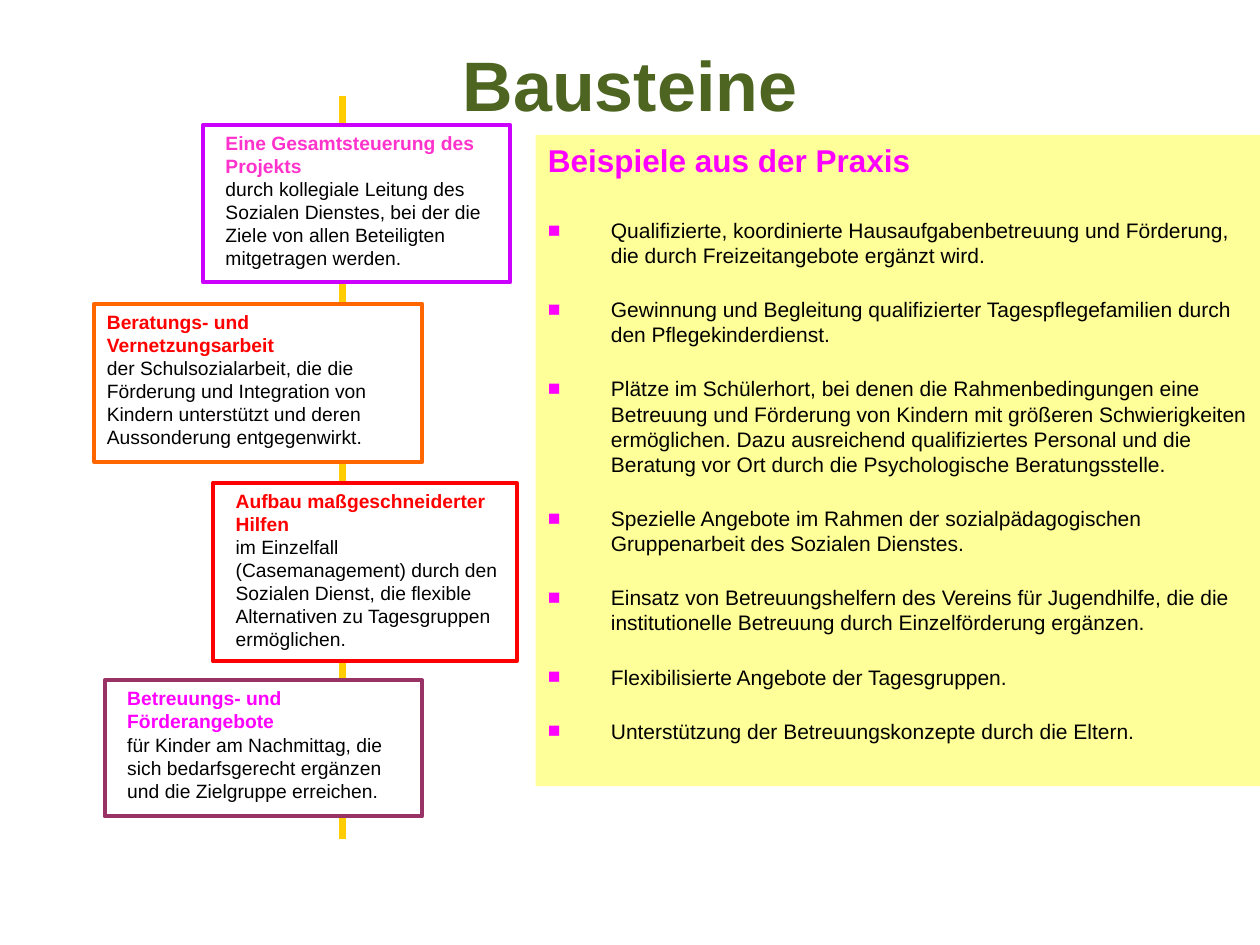
from lxml import etree
from pptx import Presentation, util as u
from pptx.dml.color import RGBColor
from pptx.enum import shapes, text
from pptx.oxml.ns import qn

COLUMNS, ROWS = 100, 75
CELL = u.Inches(0.1)

COLORS = {
    "title": "4D6521", "axis": "FFCC00", "paper": "FFFFFF", "panel": "FFFF99",
    "ink": "000000", "violet": "CC00FF", "orange": "FF6600", "red": "FF0000",
    "plum": "993366", "pink": "FF33CC", "magenta": "FF00FF",
}

# left, top, width, height (grid cells), left inset, line, heading colour, heading, body
BLOCKS = [
    (16.1, 9.9, 24.4, 12.5, 1.8, "violet", "pink", "Eine Gesamtsteuerung des Projekts",
     "durch kollegiale Leitung des Sozialen Dienstes, bei der die Ziele von allen "
     "Beteiligten mitgetragen werden."),
    (7.5, 24.1, 26, 12.6, 1, "orange", "red", "Beratungs- und Vernetzungsarbeit",
     "der Schulsozialarbeit, die die Förderung und Integration von Kindern unterstützt "
     "und deren Aussonderung entgegenwirkt."),
    (16.9, 38.3, 24.1, 14.2, 1.8, "red", "red", "Aufbau maßgeschneiderter Hilfen",
     "im Einzelfall (Casemanagement) durch den Sozialen Dienst, die flexible "
     "Alternativen zu Tagesgruppen ermöglichen."),
    (8.3, 54, 25.2, 10.8, 1.8, "plum", "magenta", "Betreuungs- und Förderangebote",
     "für Kinder am Nachmittag, die sich bedarfsgerecht ergänzen und die Zielgruppe "
     "erreichen."),
]

EXAMPLES = [
    "Qualifizierte, koordinierte Hausaufgabenbetreuung und Förderung, die durch "
    "Freizeitangebote ergänzt wird.",
    "Gewinnung und Begleitung qualifizierter Tagespflegefamilien durch den "
    "Pflegekinderdienst.",
    "Plätze im Schülerhort, bei denen die Rahmenbedingungen eine Betreuung und "
    "Förderung von Kindern mit größeren Schwierigkeiten ermöglichen. Dazu ausreichend "
    "qualifiziertes Personal und die Beratung vor Ort durch die Psychologische "
    "Beratungsstelle.",
    "Spezielle Angebote im Rahmen der sozialpädagogischen Gruppenarbeit des Sozialen "
    "Dienstes.",
    "Einsatz von Betreuungshelfern des Vereins für Jugendhilfe, die die institutionelle "
    "Betreuung durch Einzelförderung ergänzen.",
    "Flexibilisierte Angebote der Tagesgruppen.",
    "Unterstützung der Betreuungskonzepte durch die Eltern.",
]


def cells(*counts):
    return [round(count * CELL) for count in counts]


def color(name):
    return RGBColor.from_string(COLORS[name])


def add_axis(page, column, top, bottom):
    axis = page.shapes.add_connector(
        shapes.MSO_CONNECTOR.STRAIGHT, *cells(column, bottom, column, top))
    axis.line.color.rgb = color("axis")
    axis.line.width = u.Pt(4)
    etree.SubElement(axis._element.spPr, qn("a:effectLst"))


def set_frame(box, left=1, top=0.5, anchor=text.MSO_ANCHOR.TOP):
    frame = box.text_frame
    frame.word_wrap = True
    frame.vertical_anchor = anchor
    frame.margin_left, frame.margin_top, frame.margin_right, frame.margin_bottom = cells(
        left, top, 1, 0.5)
    return frame


def add_box(page, area, fill, line=None):
    box = page.shapes.add_shape(shapes.MSO_SHAPE.RECTANGLE, *cells(*area))
    box.shadow.inherit = False
    box.fill.solid()
    box.fill.fore_color.rgb = color(fill)
    if line:
        box.line.color.rgb = color(line)
        box.line.width = u.Pt(2.25)
    else:
        box.line.fill.background()
    return box


def add_bullet(para, tint):
    """Hang the paragraph by five cells behind a coloured square."""
    props = para._p.get_or_add_pPr()
    indent = 5 * CELL
    props.set("marL", str(indent))
    props.set("indent", str(-indent))
    mark_color = etree.SubElement(props, qn("a:buClr"))
    etree.SubElement(mark_color, qn("a:srgbClr"), val=COLORS[tint])
    etree.SubElement(props, qn("a:buFont"), typeface="Arial")
    etree.SubElement(props, qn("a:buChar"), char="■")


def write(frame, words, size, ink="ink", bold=False, before=0,
          align=text.PP_ALIGN.LEFT, bullet=None):
    """Fill the first empty paragraph, or append a new one."""
    para = frame.paragraphs[0]
    if para.runs:
        para = frame.add_paragraph()
    para.alignment = align
    if before:
        para.space_before = u.Pt(before)
    if bullet:
        add_bullet(para, bullet)
    span = para.add_run()
    span.text = words
    span.font.name = "Arial"
    span.font.size = u.Pt(size)
    span.font.bold = bold
    span.font.color.rgb = color(ink)


def add_title(page, words):
    box = page.shapes.add_textbox(*cells(5, 3, COLUMNS - 10, 7.7))
    frame = set_frame(box, top=0, anchor=text.MSO_ANCHOR.MIDDLE)
    write(frame, words, 40, "title", bold=True, align=text.PP_ALIGN.CENTER)


def add_block(page, area, inset, line, ink, heading, body):
    frame = set_frame(add_box(page, area, "paper", line), left=inset)
    write(frame, heading, 11, ink, bold=True)
    write(frame, body, 11)


def add_examples(page, left, top, height):
    panel = add_box(page, (left, top, COLUMNS - left, height), "panel")
    frame = set_frame(panel)
    write(frame, "Beispiele aus der Praxis", 18, "magenta", bold=True)
    for number, example in enumerate(EXAMPLES):
        write(frame, example, 12, before=16.5 if number else 22, bullet="magenta")


def main():
    deck = Presentation()
    deck.slide_width, deck.slide_height = cells(COLUMNS, ROWS)
    page = deck.slides.add_slide(deck.slide_layouts[6])
    add_axis(page, 27.2, 7.6, 66.6)
    add_title(page, "Bausteine")
    for *area, inset, line, ink, heading, body in BLOCKS:
        add_block(page, area, inset, line, ink, heading, body)
    add_examples(page, 42.5, 10.7, 51.7)
    deck.save("out.pptx")


if __name__ == "__main__":
    main()
